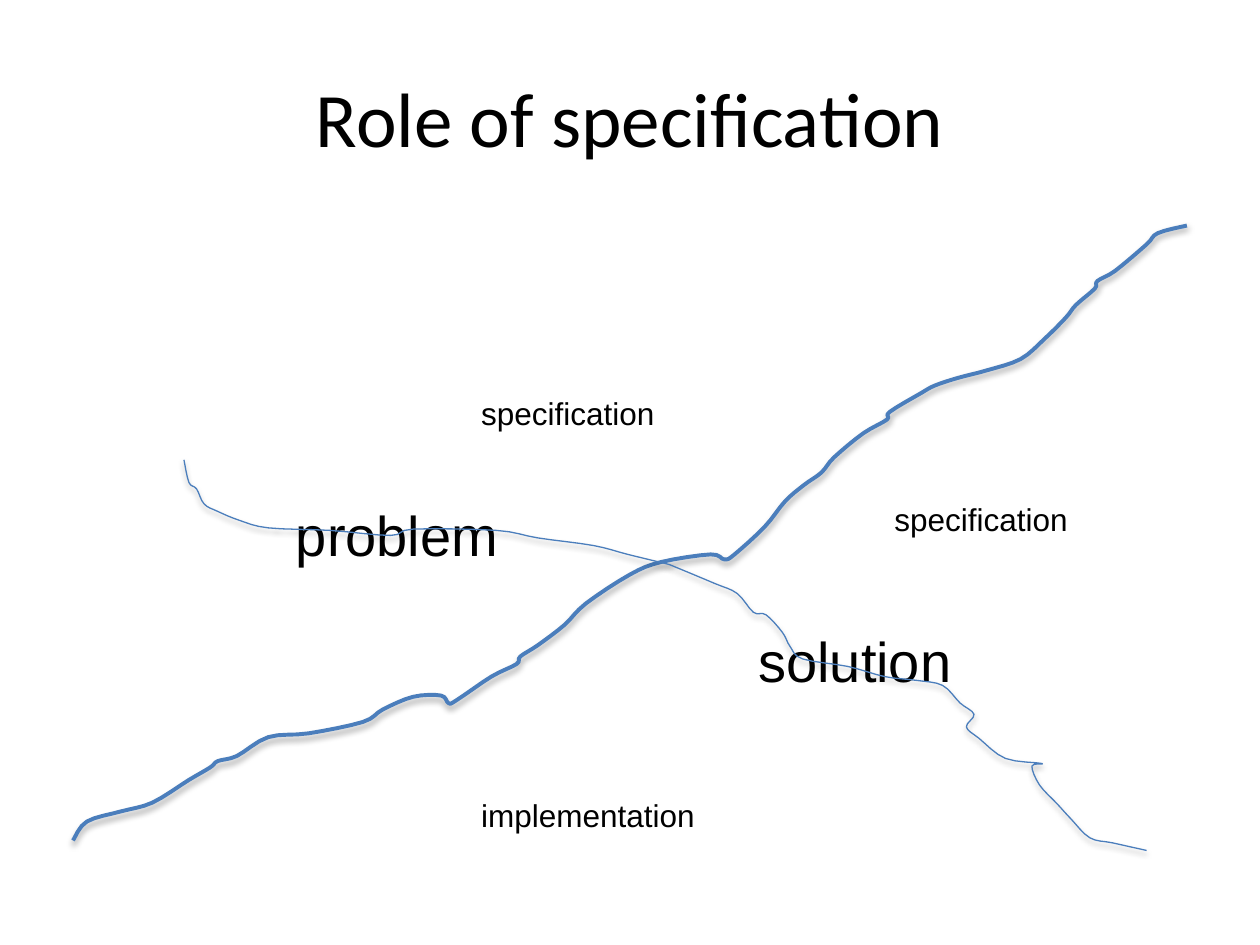
import pptx
import pptx.util
import pptx.dml.color
import pptx.enum.text
import pptx.oxml
import pptx.oxml.ns

Inches, Pt = pptx.util.Inches, pptx.util.Pt
BLUE, BLACK = "4B7EBC", "000000"
THICK, THIN = 2.25, 0.75
STEPS = 4

TITLE = "Role of specification"
LARGE = {"size": 32, "high": 0.64}
SMALL = {"size": 18, "high": 0.4}
INNER, MIDDLE = 3.72, 3.92
LABELS = [
    ("problem", 2.25, MIDDLE, 1.82, LARGE),
    ("solution", 5.92, 4.92, 1.75, LARGE),
    ("specification", 7, MIDDLE, 1.59, SMALL),
    ("implementation", INNER, 6.27, 1.91, SMALL),
    ("specification", INNER, 3.08, 1.59, SMALL),
]

CROSS = (5.31, 4.48)
RISE = [
    (9.42, 1.79), (9.19, 1.85), (9.1, 1.94), (8.85, 2.15), (8.71, 2.23),
    (8.69, 2.29), (8.54, 2.42), (8.46, 2.52), (8.29, 2.69), (8.1, 2.85),
    (7.83, 2.94), (7.6, 3), (7.42, 3.06), (7.31, 3.12), (7.06, 3.27),
    (7.04, 3.33), (6.85, 3.44), (6.62, 3.63), (6.52, 3.75), (6.38, 3.85),
    (6.23, 3.98), (6.07, 4.18), (5.83, 4.4), (5.75, 4.44), (5.64, 4.4),
    (5.25, 4.46), (5, 4.56), (4.65, 4.79), (4.48, 4.96), (4.27, 5.12),
    (4.13, 5.21), (4.1, 5.27), (3.9, 5.37), (3.62, 5.56), (3.56, 5.58),
    (3.5, 5.52), (3.28, 5.53), (3.04, 5.63), (2.88, 5.73), (2.45, 5.82),
    (2.13, 5.85), (1.88, 6), (1.73, 6.04), (1.67, 6.09), (1.5, 6.19),
    (1.21, 6.37), (0.96, 6.44), (0.69, 6.52), (0.58, 6.67),
]
EAST = [
    CROSS, (5.67, 4.63), (5.85, 4.71), (5.98, 4.86), (6.08, 4.88),
    (6.21, 5.02), (6.27, 5.13), (6.37, 5.23), (6.73, 5.29), (7.02, 5.37),
    (7.27, 5.4), (7.48, 5.44), (7.62, 5.58), (7.73, 5.67), (7.67, 5.77),
    (7.77, 5.86), (7.98, 6.02), (8.27, 6.06), (8.19, 6.08), (8.25, 6.23),
    (8.39, 6.38), (8.5, 6.5), (8.65, 6.65), (8.83, 6.69), (9.1, 6.75),
]
WEST = [
    CROSS, (4.98, 4.4), (4.71, 4.33), (4.27, 4.27), (3.94, 4.21),
    (3.28, 4.2), (3.1, 4.25), (2.62, 4.21), (2.13, 4.19), (1.9, 4.13),
    (1.73, 4.06), (1.62, 4), (1.56, 3.88), (1.5, 3.83), (1.46, 3.65),
]
CURVES = [(RISE, THICK), (EAST, THIN), (WEST, THIN)]

SHADE = (
    '<a:effectLst %s><a:outerShdw blurRad="40000" dist="23000" dir="5400000" '
    'rotWithShape="0"><a:srgbClr val="000000"><a:alpha val="35000"/>'
    "</a:srgbClr></a:outerShdw></a:effectLst>" % pptx.oxml.ns.nsdecls("a")
)


def color(code):
    return pptx.dml.color.RGBColor.from_string(code)


def write(frame, text, size, font="Arial", fill=BLACK, align=None):
    para = frame.paragraphs[0]
    para.alignment = align
    run = para.add_run()
    run.text = text
    run.font.size = Pt(size)
    run.font.name = font
    run.font.color.rgb = color(fill)


def head(slide):
    title = slide.shapes.title
    title.left, title.top = Inches(0.5), Inches(0.3)
    title.width, title.height = Inches(9), Inches(1.25)
    frame = title.text_frame
    frame.vertical_anchor = pptx.enum.text.MSO_ANCHOR.MIDDLE
    write(frame, TITLE, 44, font="Calibri",
          align=pptx.enum.text.PP_ALIGN.CENTER)


def label(slide, text, left, top, wide, style):
    box = slide.shapes.add_textbox(
        *map(Inches, (left, top, wide, style["high"])))
    frame = box.text_frame
    frame.word_wrap = False
    frame.auto_size = pptx.enum.text.MSO_AUTO_SIZE.SHAPE_TO_FIT_TEXT
    write(frame, text, style["size"])


def blend(a, b, c, d, t):
    return b + t / 2 * (
        c - a + t * (2 * a - 5 * b + 4 * c - d + t * (3 * (b - c) + d - a)))


def smooth(knots):
    ends = [knots[0], *knots, knots[-1]]
    dots = [knots[0]]
    for four in zip(ends, ends[1:], ends[2:], ends[3:]):
        for step in range(1, STEPS + 1):
            dots.append(tuple(
                blend(*axis, step / STEPS) for axis in zip(*four)))
    return dots


def curve(slide, knots, width):
    dots = [(Inches(x), Inches(y)) for x, y in smooth(knots)]
    pen = slide.shapes.build_freeform(*dots[0])
    pen.add_line_segments(dots[1:], close=False)
    shape = pen.convert_to_shape()
    shape.fill.background()
    shape.line.color.rgb = color(BLUE)
    shape.line.width = Pt(width)
    shape._element.spPr.append(pptx.oxml.parse_xml(SHADE))


def main():
    deck = pptx.Presentation()
    deck.slide_width, deck.slide_height = Inches(10), Inches(7.5)
    slide = deck.slides.add_slide(deck.slide_layouts[5])
    head(slide)
    for item in LABELS:
        label(slide, *item)
    for knots, width in CURVES:
        curve(slide, knots, width)
    deck.save("out.pptx")


if __name__ == "__main__":
    main()
